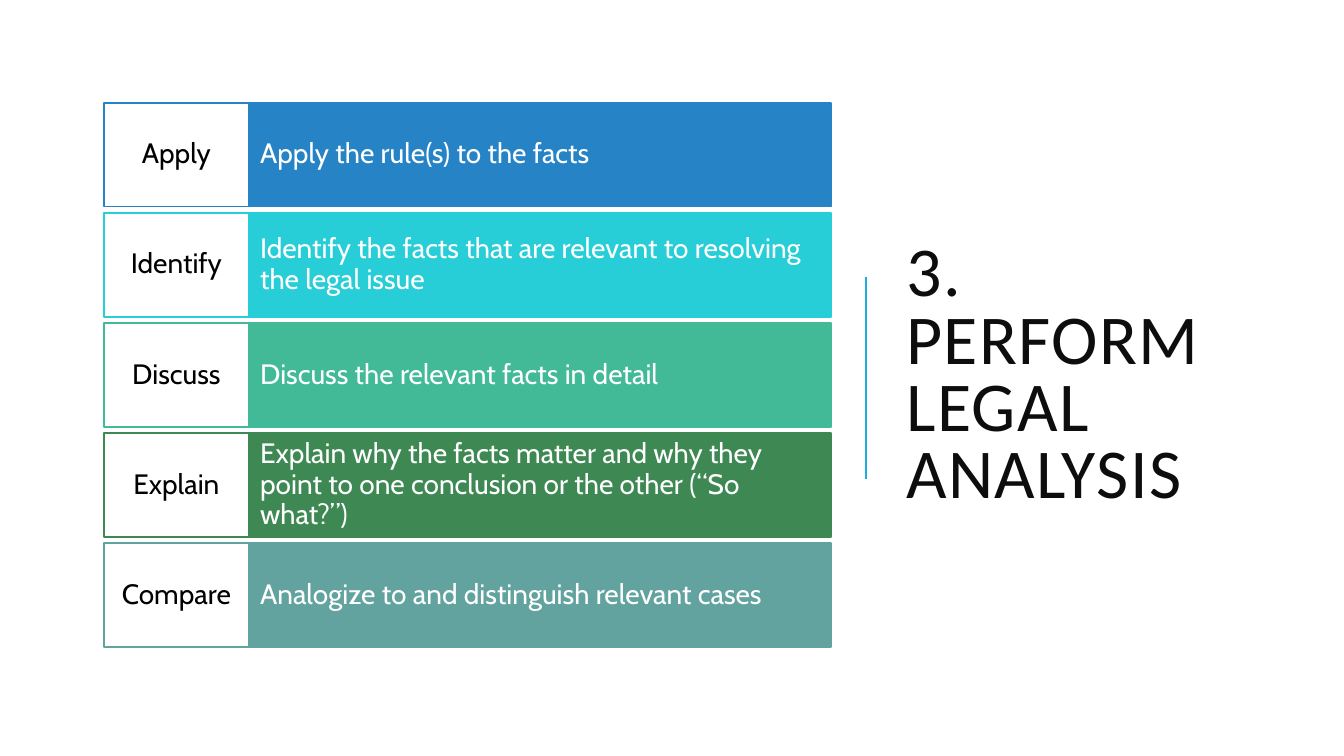
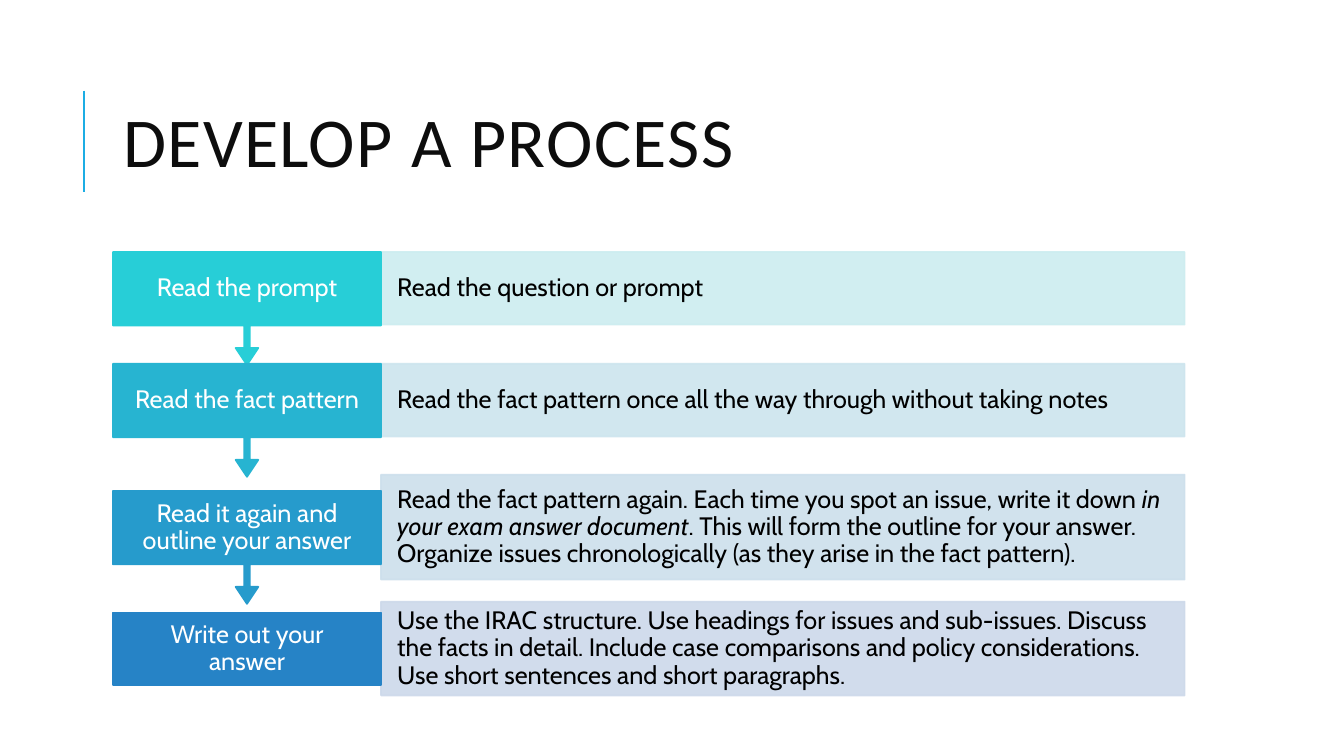
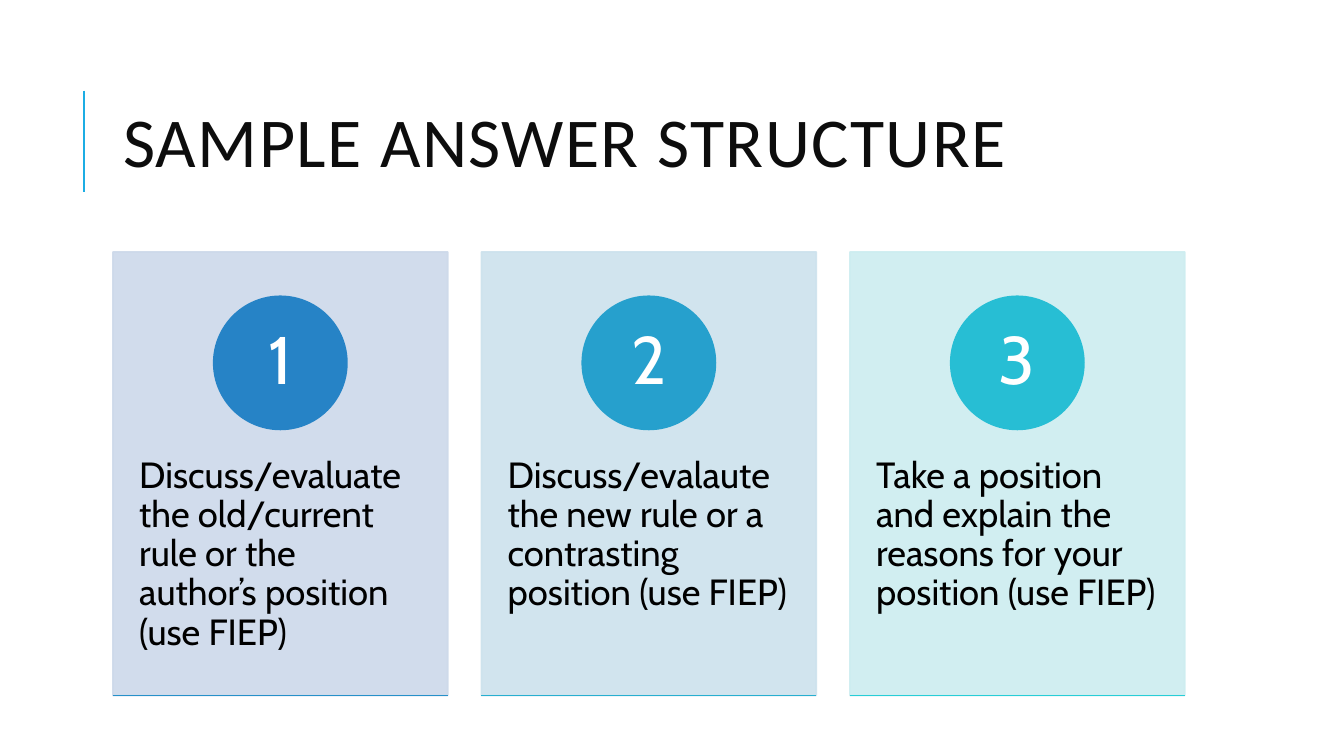
from pptx import Presentation
from pptx.dml.color import RGBColor
from pptx.enum.shapes import MSO_CONNECTOR as CONN, MSO_SHAPE as SHAPE
from pptx.enum.text import MSO_ANCHOR as ANCHOR, MSO_AUTO_SIZE as AUTO, PP_ALIGN as ALIGN
from pptx.oxml.ns import qn
from pptx.util import Inches, Pt
from lxml import etree

WHITE, BLACK, INK, ACCENT = "FFFFFF", "000000", "0D0D0D", "1CADE4"
BLUE, CYAN = "2683C6", "27CED7"
TITLE_FONT, BODY_FONT = "Calibri", "Cabin"

rgb = RGBColor.from_string


def add_line(s, x1, y1, x2, y2, color, width):
    line = s.shapes.add_connector(CONN.STRAIGHT, Inches(x1), Inches(y1), Inches(x2), Inches(y2))
    line.line.color.rgb = rgb(color)
    line.line.width = Pt(width)
    etree.SubElement(line._element.spPr, qn("a:effectLst"))


def add_box(s, kind, at, text, size, fill, color=WHITE, border=None, align=ALIGN.LEFT,
            inset=0.1, top=0, anchor=ANCHOR.MIDDLE, opacity=100):
    sp = s.shapes.add_shape(kind, *[Inches(v) for v in at])
    sp.shadow.inherit = False
    sp.fill.solid()
    sp.fill.fore_color.rgb = rgb(fill)
    sp.line.color.rgb = rgb(border or fill)
    sp.line.width = Pt(1.25)
    if opacity < 100:
        for clr in sp._element.spPr.iter(qn("a:srgbClr")):
            etree.SubElement(clr, qn("a:alpha"), val=str(opacity * 1000))
    tf = sp.text_frame
    tf.word_wrap = True
    tf.vertical_anchor = anchor
    tf.margin_left = tf.margin_right = Inches(inset)
    tf.margin_top, tf.margin_bottom = Inches(top), 0
    p = tf.paragraphs[0]
    p.alignment = align
    p.line_spacing = 0.9
    for i, part in enumerate(text.split("|")):
        r = p.add_run()
        r.text = part
        r.font.name = BODY_FONT
        r.font.size = Pt(size)
        r.font.italic = i % 2 == 1
        r.font.color.rgb = rgb(color)
    return sp


prs = Presentation()
prs.slide_width, prs.slide_height = Inches(13.33), Inches(7.5)

side_title, side_rule = (8.89, 0.7, 3.8, 6.09), (8.59, 2.75, 8.59, 4.75)
top_title, top_rule = (1.12, 0.64, 10.63, 1.64), (0.83, 0.9, 0.83, 1.9)
titles = [
    ("3. PERFORM LEGAL ANALYSIS", side_title, side_rule),
    ("DEVELOP A PROCESS", top_title, top_rule),
    ("SAMPLE ANSWER STRUCTURE", top_title, top_rule),
]
slides = []
for text, at, rule in titles:
    s = prs.slides.add_slide(prs.slide_layouts[5])
    title = s.shapes.title
    title.left, title.top, title.width, title.height = [Inches(v) for v in at]
    tf = title.text_frame
    tf.text = text
    tf.word_wrap = True
    tf.auto_size = AUTO.NONE
    tf.vertical_anchor = ANCHOR.MIDDLE
    p = tf.paragraphs[0]
    p.alignment = ALIGN.LEFT
    p.line_spacing = 0.8
    r = p.runs[0]
    r.font.name = TITLE_FONT
    r.font.size = Pt(50)
    r.font.color.rgb = rgb(INK)
    r._r.get_or_add_rPr().set("spc", "100")
    add_line(s, *rule, ACCENT, 1.5)
    slides.append(s)

analysis, process, structure = slides

tasks = [
    ("Apply", "Apply the rule(s) to the facts", BLUE),
    ("Identify", "Identify the facts that are relevant to resolving the legal issue", CYAN),
    ("Discuss", "Discuss the relevant facts in detail", "42BA97"),
    ("Explain", "Explain why the facts matter and why they point to one conclusion "
                "or the other (“So what?”)", "3E8853"),
    ("Compare", "Analogize to and distinguish relevant cases", "62A39F"),
]
pitch = (5.39 - 1.02) / (len(tasks) - 1)
for i, (label, text, color) in enumerate(tasks):
    y = 1.02 + i * pitch
    add_box(analysis, SHAPE.RECTANGLE, (2.47, y, 5.77, 1.03), text, 20, color, inset=0.11)
    add_box(analysis, SHAPE.RECTANGLE, (1.03, y, 1.44, 1.03), label, 20, WHITE, BLACK,
            border=color, align=ALIGN.CENTER, inset=0.08)

steps = [
    ("Read the prompt", "Read the question or prompt", 2.5, 0.72, CYAN, "CDEDF0"),
    ("Read the fact pattern",
     "Read the fact pattern once all the way through without taking notes",
     3.61, 0.72, "27B4D1", "CDE5EE"),
    ("Read it again and outline your answer",
     "Read the fact pattern again. Each time you spot an issue, write it down "
     "|in your exam answer document|. This will form the outline for your answer. "
     "Organize issues chronologically (as they arise in the fact pattern).",
     4.71, 1.04, "269BCC", "CDDFEC"),
    ("Write out your answer",
     "Use the IRAC structure. Use headings for issues and sub-issues. Discuss the facts "
     "in detail. Include case comparisons and policy considerations. Use short sentences "
     "and short paragraphs.",
     5.97, 0.93, BLUE, "CDD9EA"),
]
for i, (label, text, y, height, color, tint) in enumerate(steps):
    last = i == len(steps) - 1
    kind, step_height = (SHAPE.RECTANGLE, 0.72) if last else (SHAPE.DOWN_ARROW_CALLOUT, 1.12)
    step_y = y + (height - 0.72) / 2
    add_box(process, SHAPE.RECTANGLE, (3.78, y, 7.97, height), text, 18, tint, BLACK,
            inset=0.16, opacity=90)
    step = add_box(process, kind, (1.12, step_y, 2.66, step_height), label, 18, color,
                   align=ALIGN.CENTER, inset=0.19)
    if not last:
        for j, value in enumerate((0.05, 0.1, 0.15, 0.65)):
            step.adjustments[j] = value

cards = [
    ("Discuss/evaluate the old/current rule or the author’s position (use FIEP)",
     "CDD9EA", BLUE, "2691C9"),
    ("Discuss/evalaute the new rule or a contrasting position (use FIEP)",
     "CDE2ED", "26A0CD", "27AFD0"),
    ("Take a position and explain the reasons for your position (use FIEP)",
     "CDEDF0", "27BED4", CYAN),
]
card_width = 3.32
card_pitch = (10.63 - card_width) / (len(cards) - 1)
for i, (text, tint, color, edge) in enumerate(cards):
    x = 1.12 + i * card_pitch
    add_box(structure, SHAPE.RECTANGLE, (x, 2.5, card_width, 4.4), text, 26, tint, BLACK,
            inset=0.26, top=2.03, anchor=ANCHOR.TOP, opacity=90)
    add_box(structure, SHAPE.OVAL, (x + 1, 2.94, 1.32, 1.32), str(i + 1), 48, color,
            align=ALIGN.CENTER)
    add_line(structure, x, 6.9, x + card_width, 6.9, edge, 1.25)

prs.save("out.pptx")
